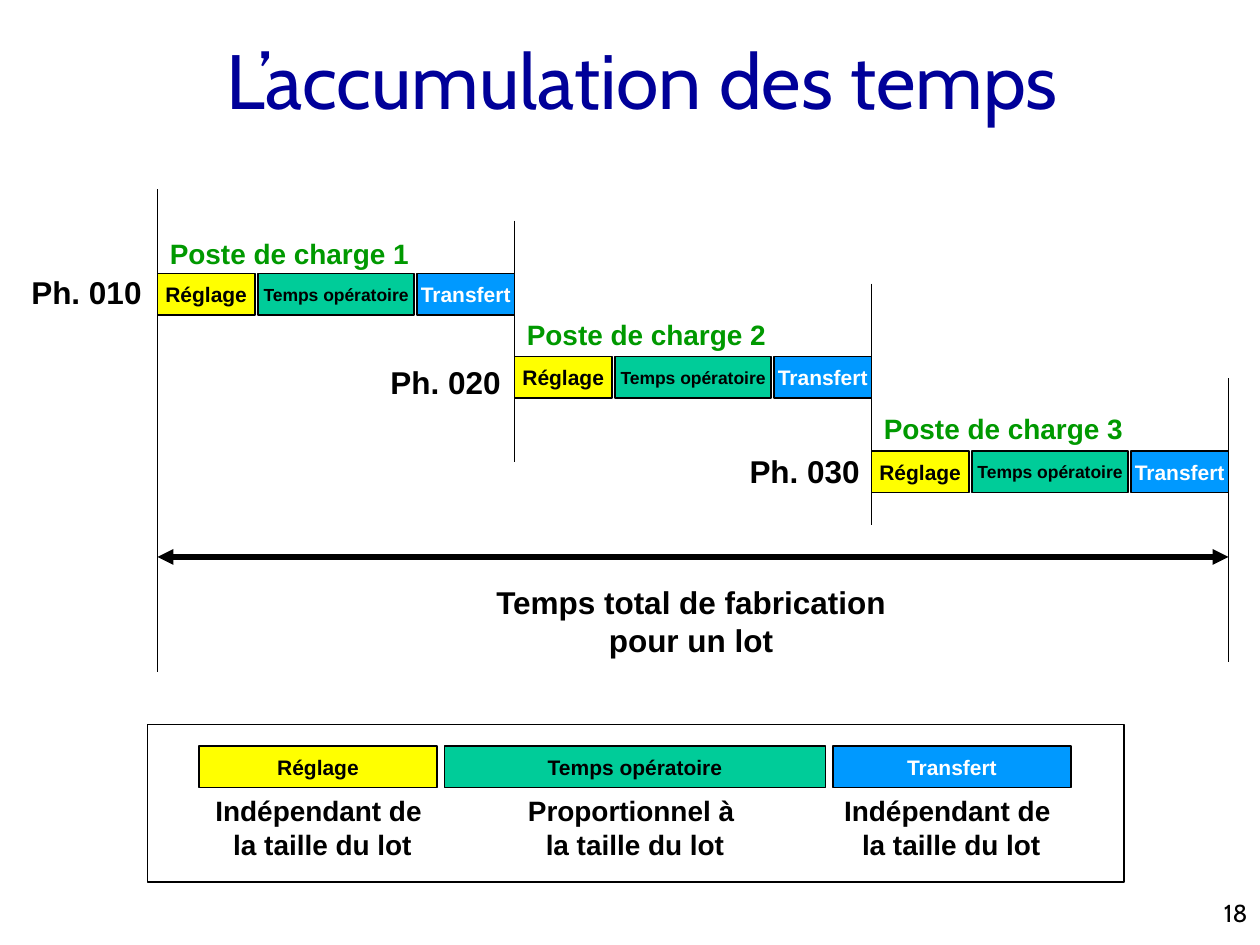
from lxml.etree import SubElement as Sub
from pptx import Presentation
from pptx.dml.color import RGBColor as RGB
from pptx.enum.shapes import MSO_CONNECTOR as Conn, MSO_SHAPE as Kind
from pptx.enum.text import MSO_ANCHOR as Anchor, PP_ALIGN as Align
from pptx.oxml.ns import qn
from pptx.util import Inches as In, Pt

WIDE, HIGH = 10, 7.5
LEFT, STEP = WIDE / 8, 8.5 / 3
BAR = 0.33
BLACK, WHITE, NAVY, GREEN = "000000", "FFFFFF", "000099", "009900"

PARTS = [
    ("Réglage", 0.273, "FFFF00", BLACK, 12),
    ("Temps opératoire", 0.437, "00CC99", BLACK, 10),
    ("Transfert", 0.273, "0099FF", WHITE, 12),
]
GAP = (1 - sum(part[1] for part in PARTS)) / (len(PARTS) - 1)
PHASES = [
    ("Ph. 010", "Poste de charge 1", 2.17, 1.83),
    ("Ph. 020", "Poste de charge 2", 2.83, 2.47),
    ("Ph. 030", "Poste de charge 3", 3.58, 3.22),
]
MARKS = [(1.5, 5.33), (1.75, 3.67), (2.25, 4.17), (3, 5.25)]
TOTAL = ["Temps total de fabrication", "pour un lot"]
NOTES = [
    ("Indépendant de ", 1.61),
    ("Proportionnel à ", 4.09),
    ("Indépendant de ", 6.6),
]
SIZE = "la taille du lot"

deck = Presentation()
deck.slide_width, deck.slide_height = In(WIDE), In(HIGH)
slide = deck.slides.add_slide(deck.slide_layouts[6])


def tint(code):
    return RGB.from_string(code)


def write(shape, lines, size, color, align, face="Arial", bold=True, wrap=False):
    frame = shape.text_frame
    frame.word_wrap = wrap
    frame.text = "\n".join(lines)
    for para in frame.paragraphs:
        para.alignment = align
        font = para.font
        font.name, font.size, font.bold = face, Pt(size), bold
        font.color.rgb = tint(color)
    return frame


def text(x, y, w, h, *args, **more):
    box = slide.shapes.add_textbox(In(x), In(y), In(w), In(h))
    return write(box, *args, **more)


def rect(home, x, y, w, h, fill=None):
    shape = home.add_shape(Kind.RECTANGLE, In(x), In(y), In(w), In(h))
    shape.shadow.inherit = False
    if fill:
        shape.fill.solid()
        shape.fill.fore_color.rgb = tint(fill)
    else:
        shape.fill.background()
    shape.line.color.rgb = tint(BLACK)
    shape.line.width = Pt(0.75)
    return shape


def bars(x, y, w, fixed=None):
    group = slide.shapes.add_group_shape()
    for name, share, fill, color, size in PARTS:
        bar = rect(group.shapes, x, y, w * share, BAR, fill)
        frame = write(bar, [name], fixed or size, color, Align.CENTER)
        frame.vertical_anchor = Anchor.MIDDLE
        x += w * (share + GAP)


def line(x1, y1, x2, y2, width=0.75, heads=()):
    link = slide.shapes.add_connector(Conn.STRAIGHT, In(x1), In(y1), In(x2), In(y2))
    link.line.color.rgb = tint(BLACK)
    link.line.width = Pt(width)
    for end in heads:
        Sub(link.line._get_or_add_ln(), qn("a:" + end), type="triangle")
    Sub(link._element.spPr, qn("a:effectLst"))


text(7.92, 7.08, 2.08, 0.25, ["18"], 14, BLACK, Align.RIGHT, "Cabin", False, True)
title = text(0, 0, 8.5, 1.25, ["L’accumulation des temps"], 44, NAVY,
             Align.RIGHT, "Cabin", False, True)
title.vertical_anchor = Anchor.MIDDLE

for i, (phase, post, top, head) in enumerate(PHASES):
    x = LEFT + i * STEP
    bars(x, top, STEP)
    text(0.15 + 2.85 * i, 2.12 + 0.71 * i, 1.08, 0.4, [phase], 18, BLACK, Align.LEFT)
    text(x, head, 2.1, 0.37, [post], 16, GREEN, Align.LEFT)

for i, (top, end) in enumerate(MARKS):
    x = LEFT + i * STEP
    line(x, top, x, end)
line(LEFT, 4.42, LEFT + 3 * STEP, 4.42, 3, ("headEnd", "tailEnd"))
text(3.83, 4.58, 3.31, 0.7, TOTAL, 18, BLACK, Align.CENTER)

bars(1.58, 5.92, 6.92, 12)
for note, x in NOTES:
    text(x, 6.25, 1.9, 0.64, [note, SIZE], 16, BLACK, Align.CENTER)
rect(slide.shapes, 1.17, 5.75, 7.75, 1.25)

deck.save("out.pptx")
